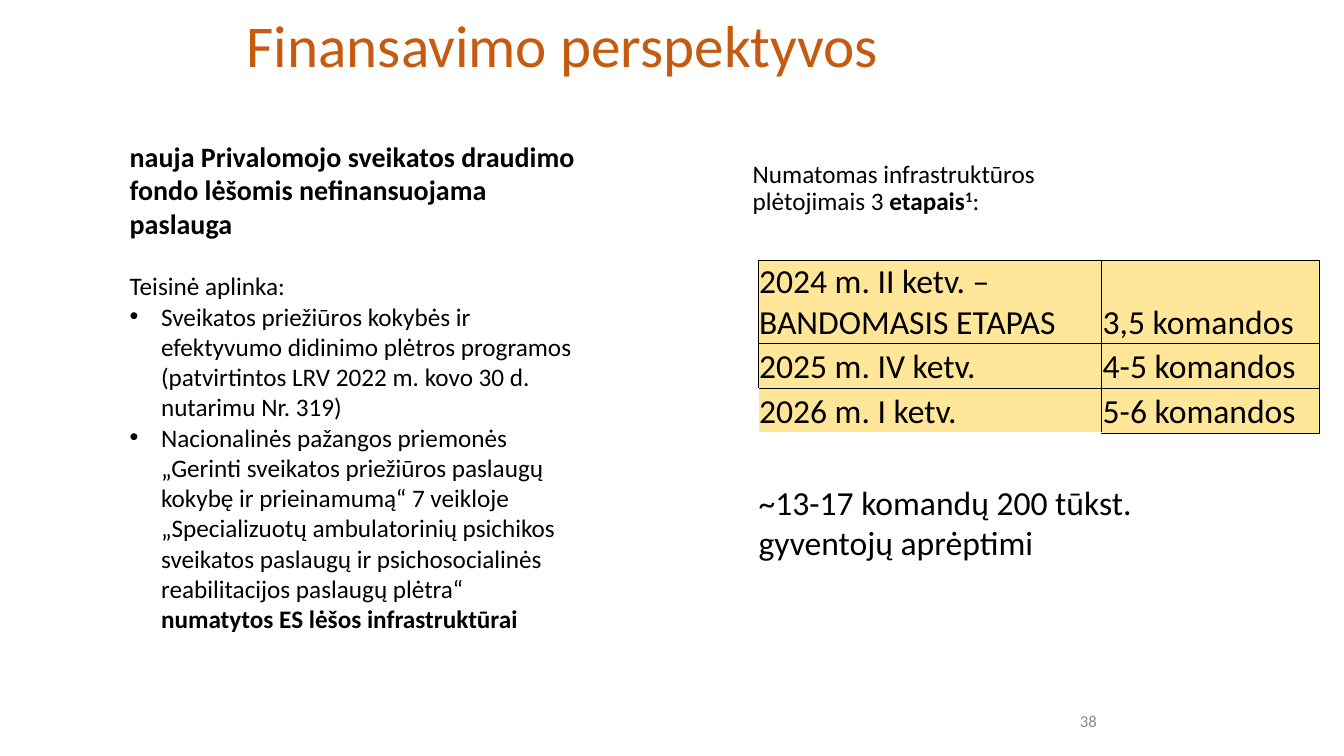
from lxml.etree import SubElement
from pptx import Presentation
from pptx.dml.color import RGBColor
from pptx.enum.text import MSO_ANCHOR, PP_ALIGN
from pptx.oxml.ns import qn
from pptx.util import Cm, Pt

TITLE = "Finansavimo perspektyvos"
PAGE = "38"
LEAD = "nauja Privalomojo sveikatos draudimo fondo lėšomis nefinansuojama paslauga"
LEGAL = "Teisinė aplinka:"
POINTS = [
    [("Sveikatos priežiūros kokybės ir efektyvumo didinimo plėtros programos "
      "(patvirtintos LRV 2022 m. kovo 30 d. nutarimu Nr. 319)", "")],
    [("Nacionalinės pažangos priemonės „Gerinti sveikatos priežiūros paslaugų kokybę "
      "ir prieinamumą“ 7 veikloje „Specializuotų ambulatorinių psichikos sveikatos "
      "paslaugų ir psichosocialinės reabilitacijos paslaugų plėtra“ ", ""),
     ("numatytos ES lėšos infrastruktūrai", "b")],
]
STAGES = [("Numatomas infrastruktūros plėtojimais 3", ""), (" etapais", "b"),
          ("1", "b^"), (":", "")]
TEAMS = [
    ("2024 m. II ketv. – BANDOMASIS ETAPAS", "3,5 komandos"),
    ("2025 m. IV ketv.", "4-5 komandos"),
    ("2026 m. I ketv.", "5-6 komandos"),
]
TOTAL = "~13-17 komandų 200 tūkst. gyventojų aprėptimi"
COLS = (8.66, 5.49)
ROWS = (2.1, 1.13, 1.13)
BLACK, ORANGE, GRAY, YELLOW = "000000", "C55A11", "8C8C8C", "FFE699"


def color(code):
    return RGBColor.from_string(code)


def write(para, parts, size, tint=BLACK):
    for text, style in parts:
        run = para.add_run()
        run.text = text
        run.font.name = "Calibri"
        run.font.size = Pt(size)
        run.font.bold = "b" in style
        run.font.color.rgb = color(tint)
        if "^" in style:
            run._r.get_or_add_rPr().set("baseline", "30000")


def box(left, top, width, height, anchor=MSO_ANCHOR.TOP):
    frame = slide.shapes.add_textbox(Cm(left), Cm(top), Cm(width), Cm(height)).text_frame
    frame.word_wrap = True
    frame.vertical_anchor = anchor
    return frame


def bullet(para):
    props = para._p.get_or_add_pPr()
    props.set("marL", str(Cm(0.79)))
    props.set("indent", str(-Cm(0.79)))
    SubElement(props, qn("a:buFont")).set("typeface", "Arial")
    SubElement(props, qn("a:buChar")).set("char", "•")


def border(cell, sides):
    props = cell._tc.get_or_add_tcPr()
    for side in sides:
        line = SubElement(props, qn("a:ln" + side))
        line.set("w", str(Pt(0.5)))
        fill = SubElement(line, qn("a:solidFill"))
        SubElement(fill, qn("a:srgbClr")).set("val", BLACK)


deck = Presentation()
deck.slide_width, deck.slide_height = Cm(33.87), Cm(19.05)
slide = deck.slides.add_slide(deck.slide_layouts[6])

para = box(5.97, 0.53, 21.9, 1.37, MSO_ANCHOR.MIDDLE).paragraphs[0]
para.line_spacing = 0.9
write(para, [(TITLE, "")], 42.3, ORANGE)

para = box(22.17, 17.65, 5.72, 1.02, MSO_ANCHOR.MIDDLE).paragraphs[0]
para.alignment = PP_ALIGN.RIGHT
para.space_after = Pt(6)
write(para, [(PAGE, "")], 12, GRAY)

frame = box(3.02, 3.38, 11.73, 12.83)
write(frame.paragraphs[0], [(LEAD, "b")], 20)
para = frame.add_paragraph()
para.space_before = Pt(22)
write(para, [(LEGAL, "")], 18)
for parts in POINTS:
    para = frame.add_paragraph()
    bullet(para)
    write(para, parts, 18)

write(box(18.87, 12.01, 11, 2.31).paragraphs[0], [(TOTAL, "")], 24)

frame = box(18.72, 2.9, 10.11, 6.2)
frame.margin_top = Cm(1.17)
para = frame.paragraphs[0]
para.line_spacing = 0.9
write(para, STAGES, 18)

table = slide.shapes.add_table(len(ROWS), len(COLS), Cm(19.1), Cm(6.55),
                               Cm(sum(COLS)), Cm(sum(ROWS))).table
table.first_row = table.horz_banding = False
for col, width in zip(table.columns, COLS):
    col.width = Cm(width)
for row, height in zip(table.rows, ROWS):
    row.height = Cm(height)
for i, texts in enumerate(TEAMS):
    for j, text in enumerate(texts):
        cell = table.cell(i, j)
        cell.margin_left = cell.margin_right = cell.margin_top = Cm(0.03)
        cell.margin_bottom = 0
        cell.vertical_anchor = MSO_ANCHOR.BOTTOM
        border(cell, "RT" if (i, j) == (len(ROWS) - 1, 0) else "LRTB")
        cell.fill.solid()
        cell.fill.fore_color.rgb = color(YELLOW)
        write(cell.text_frame.paragraphs[0], [(text, "")], 24)

deck.save("out.pptx")
